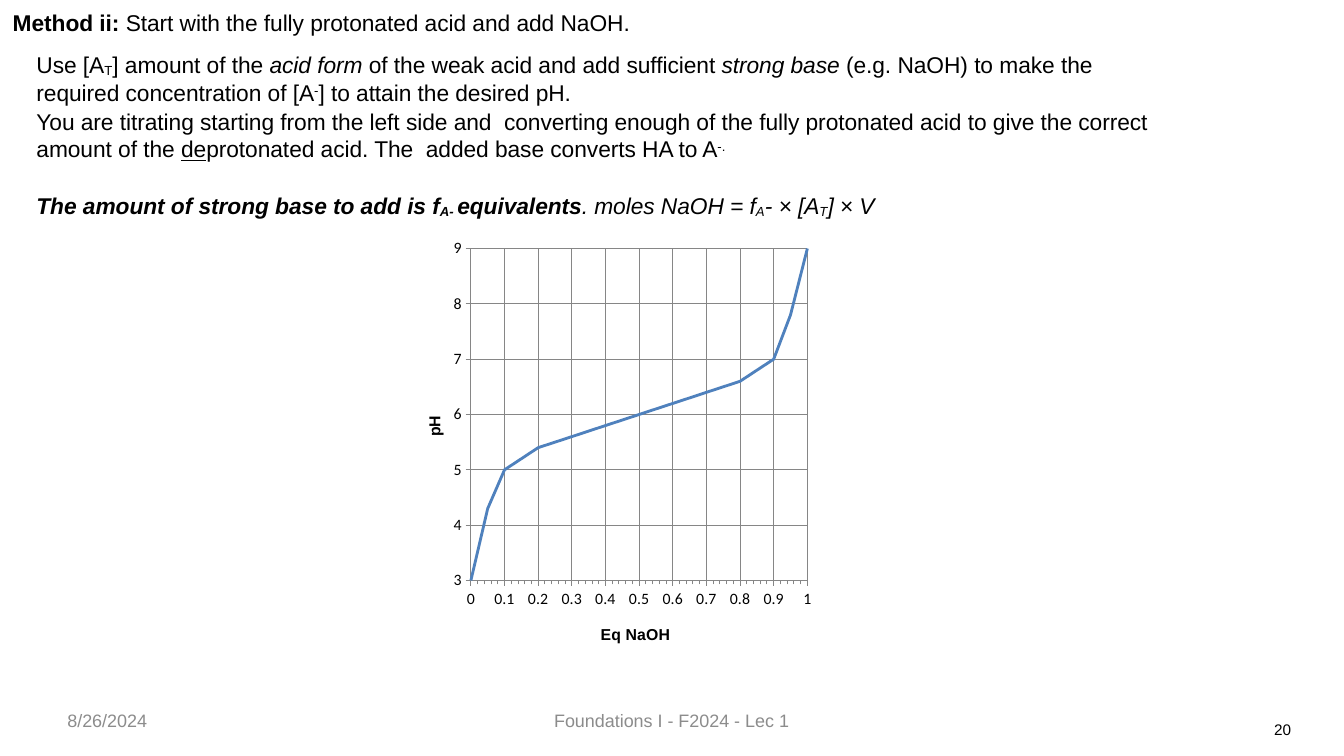
import pptx
import pptx.chart.data
import pptx.dml.color
import pptx.enum.chart
import pptx.enum.text
import pptx.oxml
import pptx.oxml.ns
import pptx.util

Inches = pptx.util.Inches
Pt = pptx.util.Pt
ALIGN = pptx.enum.text.PP_ALIGN
ANCHOR = pptx.enum.text.MSO_ANCHOR
BLACK = pptx.dml.color.RGBColor(0x00, 0x00, 0x00)
FOOTER_GREY = pptx.dml.color.RGBColor(0x8C, 0x8C, 0x8C)
GRID_GREY = pptx.dml.color.RGBColor(0x86, 0x86, 0x86)
CURVE_BLUE = pptx.dml.color.RGBColor(0x4F, 0x81, 0xBD)
WHITE = pptx.dml.color.RGBColor(0xFF, 0xFF, 0xFF)
SUB, SUPER = -8000, 26000
TEXT_SIZE, AXIS_SIZE = 18, 12.5

# Each run: text, style letters (b, i, u), baseline shift
HEADING = [("Method ii: ", "b", 0),
           ("Start with the fully protonated acid and add NaOH.", "", 0)]
ACID_FORM = [("Use [A", "", 0), ("T", "", SUB), ("] amount of the ", "", 0),
             ("acid form ", "i", 0),
             ("of the weak acid and add sufficient ", "", 0),
             ("strong base ", "i", 0), ("(e.g. NaOH) to make the ", "", 0),
             ("\n", "", 0), ("required concentration of [A", "", 0),
             ("-", "", SUPER), ("] to attain the desired pH.", "", 0)]
TITRATION = [("You are titrating starting from the left side and  converting "
              "enough of the fully protonated acid to give the correct "
              "amount of the ", "", 0),
             ("de", "u", 0),
             ("protonated acid. The  added base converts HA to A", "", 0),
             ("-.", "", SUPER)]
AMOUNT = [("The amount of strong base to add is f", "bi", 0),
          ("A- ", "bi", SUB), ("equivalents", "bi", 0),
          (". moles NaOH = f", "i", 0), ("A", "i", SUB),
          ("- × [A", "i", 0), ("T", "i", SUB), ("] × V", "i", 0)]

EQUIVALENTS = [step / 20 for step in range(21)]
PH_VALUES = [3, 4.3, 5, 5.2, 5.4, 5.5, 5.6, 5.7, 5.8, 5.9, 6,
             6.1, 6.2, 6.3, 6.4, 6.5, 6.6, 6.8, 7, 7.8, 9]


def place(shape, box):
    shape.left, shape.top, shape.width, shape.height = map(Inches, box)


def style_font(font, size, color, name="Arial"):
    font.size = Pt(size)
    font.name = name
    font.color.rgb = color


def add_runs(para, runs):
    for text, style, baseline in runs:
        if text == "\n":
            para.add_line_break()
            continue
        span = para.add_run()
        span.text = text
        style_font(span.font, TEXT_SIZE, BLACK)
        span.font.bold = "b" in style
        span.font.italic = "i" in style
        span.font.underline = "u" in style
        properties = span._r.get_or_add_rPr()
        properties.set("spc", "-5")
        if baseline:
            properties.set("baseline", str(baseline))


def set_frame(frame, insets, anchor):
    frame.word_wrap = True
    frame.auto_size = pptx.enum.text.MSO_AUTO_SIZE.NONE
    frame.vertical_anchor = anchor
    (frame.margin_left, frame.margin_top,
     frame.margin_right, frame.margin_bottom) = map(Inches, insets)


def fill_heading(shape, box):
    place(shape, box)
    set_frame(shape.text_frame, (0.01, 0.01, 0, 0), ANCHOR.TOP)
    para = shape.text_frame.paragraphs[0]
    para.alignment = ALIGN.LEFT
    para.space_before = Pt(1)
    add_runs(para, HEADING)


def fill_explanation(shape, box):
    place(shape, box)
    frame = shape.text_frame
    set_frame(frame, (0.1, 0.05, 0.1, 0.05), ANCHOR.TOP)
    rows = [(ACID_FORM, 0.7, 1.02), (TITRATION, 0.7, 1.02), (AMOUNT, 23, 1)]
    for index, (runs, space, spacing) in enumerate(rows):
        para = frame.add_paragraph() if index else frame.paragraphs[0]
        para.space_before = Pt(space)
        para.line_spacing = spacing
        properties = para._p.get_or_add_pPr()
        properties.set("marL", "0")
        properties.set("indent", "0")
        properties.append(pptx.oxml.parse_xml(
            f"<a:buNone {pptx.oxml.ns.nsdecls('a')}/>"))
        add_runs(para, runs)


def set_layout(element, index, **fractions):
    """Fix a chart part's position, as fractions of the chart."""
    qn = pptx.oxml.ns.qn
    present = element.find(qn("c:layout"))
    if present is not None:
        element.remove(present)
    target = '<c:layoutTarget val="inner"/>' if "w" in fractions else ""
    modes = '<c:xMode val="edge"/><c:yMode val="edge"/>'
    sizes = "".join(f'<c:{key} val="{value}"/>'
                    for key, value in fractions.items())
    element.insert(index, pptx.oxml.parse_xml(
        f"<c:layout {pptx.oxml.ns.nsdecls('c')}><c:manualLayout>"
        f"{target}{modes}{sizes}</c:manualLayout></c:layout>"))


def style_axis(axis, title, low, high, step, title_x, title_y):
    axis.minimum_scale, axis.maximum_scale = low, high
    axis.major_unit = step
    axis.major_tick_mark = pptx.enum.chart.XL_TICK_MARK.OUTSIDE
    axis.has_major_gridlines = True
    for line in (axis.major_gridlines.format.line, axis.format.line):
        line.color.rgb = GRID_GREY
        line.width = Pt(0.75)
    style_font(axis.tick_labels.font, AXIS_SIZE, BLACK, "Calibri")
    axis.tick_labels.number_format = "General"
    axis.tick_labels.number_format_is_linked = False
    span = axis.axis_title.text_frame.paragraphs[0].add_run()
    span.text = title
    style_font(span.font, AXIS_SIZE, BLACK)
    span.font.bold = True
    set_layout(axis.axis_title._element, 1, x=title_x, y=title_y)


def add_titration_chart(page, box):
    data = pptx.chart.data.XyChartData()
    curve_data = data.add_series("Series 1")
    for equivalents, ph in zip(EQUIVALENTS, PH_VALUES):
        curve_data.add_data_point(equivalents, ph)
    chart = page.shapes.add_chart(
        pptx.enum.chart.XL_CHART_TYPE.XY_SCATTER_SMOOTH_NO_MARKERS,
        *map(Inches, box), data).chart
    chart.has_legend = False
    chart.has_title = False
    style_font(chart.font, AXIS_SIZE, BLACK, "Calibri")
    chart.plots[0].vary_by_categories = False
    curve = chart.plots[0].series[0]
    curve.smooth = True
    curve.marker.style = pptx.enum.chart.XL_MARKER_STYLE.NONE
    curve.format.line.color.rgb = CURVE_BLUE
    curve.format.line.width = Pt(2.25)
    style_axis(chart.category_axis, "Eq NaOH", 0, 1, 0.1, 0.45, 0.91)
    chart.category_axis.minor_tick_mark = pptx.enum.chart.XL_TICK_MARK.OUTSIDE
    style_axis(chart.value_axis, "pH", 3, 9, 1, 0.04, 0.43)
    set_layout(chart._chartSpace.chart.plotArea, 0,
               x=0.155, y=0.054, w=0.783, h=0.761)


def add_footer_text(page, box, text, size, color, alignment):
    shape = page.shapes.add_textbox(*map(Inches, box))
    set_frame(shape.text_frame, (0, 0, 0, 0), ANCHOR.MIDDLE)
    para = shape.text_frame.paragraphs[0]
    para.alignment = alignment
    span = para.add_run()
    span.text = text
    style_font(span.font, size, color)


def build_method_page(deck):
    page = deck.slides.add_slide(deck.slide_layouts[1])
    page.background.fill.solid()
    page.background.fill.fore_color.rgb = WHITE
    fill_heading(page.shapes.title, (0.13, 0.09, 7.97, 0.32))
    add_titration_chart(page, (4.44, 2.47, 4.72, 4.79))
    fill_explanation(page.placeholders[1], (0.3, 0.5, 13.08, 1.96))
    add_footer_text(page, (0.74, 7.69, 3.44, 0.44), "8/26/2024",
                    14.2, FOOTER_GREY, ALIGN.LEFT)
    add_footer_text(page, (5.04, 7.69, 4.67, 0.44),
                    "Foundations I - F2024 - Lec 1",
                    14.2, FOOTER_GREY, ALIGN.CENTER)
    add_footer_text(page, (13.86, 7.91, 0.32, 0.2), "20",
                    12.1, BLACK, ALIGN.RIGHT)


def main():
    deck = pptx.Presentation()
    deck.slide_width, deck.slide_height = Inches(14.76), Inches(8.3)
    build_method_page(deck)
    deck.save("out.pptx")


if __name__ == "__main__":
    main()
